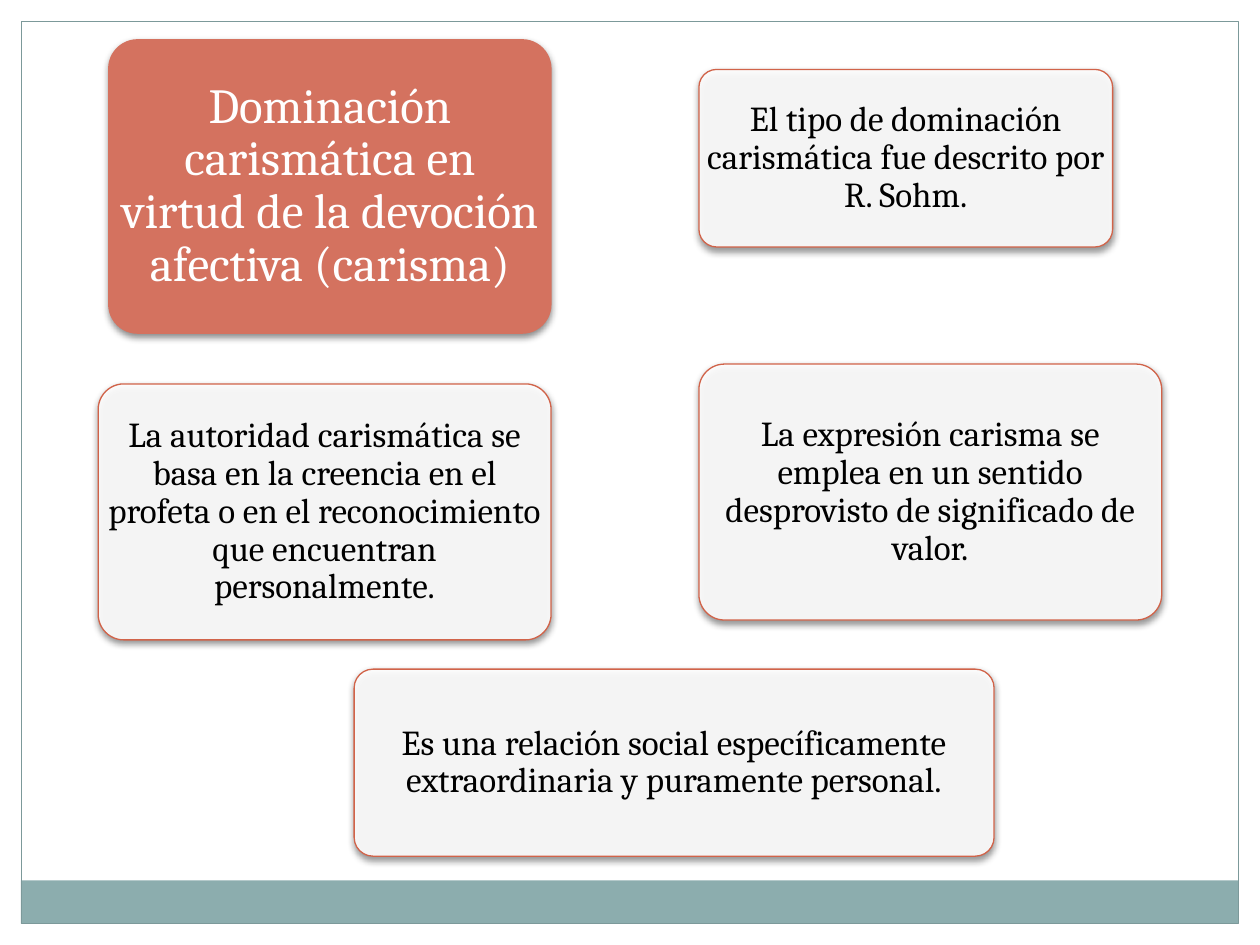
import pptx
import pptx.util
import pptx.dml.color
import pptx.enum.shapes
import pptx.enum.text
import pptx.oxml
import pptx.oxml.ns
from lxml import etree

Cm = pptx.util.Cm
Pt = pptx.util.Pt
SHAPE = pptx.enum.shapes.MSO_SHAPE

THEME = {
    "font": "Cambria",
    "title_size": 28,
    "body_size": 20,
    "white": "FFFFFF",
    "black": "000000",
    "coral": "D4725F",
    "coral_line": "D16349",
    "band": "8CADAE",
    "frame": "7C999A",
}


def add_box(s, kind, at, fill=None, line=None, alpha=None, shadow=False):
    sp = s.shapes.add_shape(kind, *[Cm(v) for v in at])
    sp.shadow.inherit = False
    if kind == SHAPE.ROUNDED_RECTANGLE:
        sp.adjustments[0] = 0.1
    if fill:
        sp.fill.solid()
        sp.fill.fore_color.rgb = pptx.dml.color.RGBColor.from_string(fill)
    else:
        sp.fill.background()
    if line:
        sp.line.color.rgb = pptx.dml.color.RGBColor.from_string(line)
        sp.line.width = Pt(0.75)
    else:
        sp.line.fill.background()
    qn = pptx.oxml.ns.qn
    spPr = sp._element.spPr
    if alpha:
        color = spPr.find(qn("a:solidFill")).find(qn("a:srgbClr"))
        etree.SubElement(color, qn("a:alpha"), val=str(alpha * 1000))
    if shadow:
        spPr.find(qn("a:effectLst")).append(pptx.oxml.parse_xml(
            f'<a:outerShdw {pptx.oxml.ns.nsdecls("a")} blurRad="{Pt(4)}" dist="{Pt(2)}" '
            f'dir="5400000" rotWithShape="0"><a:srgbClr val="{THEME["black"]}">'
            '<a:alpha val="45000"/></a:srgbClr></a:outerShdw>'))
    return sp


def write(sp, text, size, color, inset):
    tf = sp.text_frame
    tf.word_wrap = True
    tf.auto_size = pptx.enum.text.MSO_AUTO_SIZE.NONE
    tf.vertical_anchor = pptx.enum.text.MSO_ANCHOR.MIDDLE
    tf.margin_left = tf.margin_right = Cm(inset)
    tf.margin_top = tf.margin_bottom = Cm(inset / 2)
    p = tf.paragraphs[0]
    p.alignment = pptx.enum.text.PP_ALIGN.CENTER
    p.line_spacing = 0.9
    r = p.add_run()
    r.text = text
    r.font.name = THEME["font"]
    r.font.size = Pt(size)
    r.font.color.rgb = pptx.dml.color.RGBColor.from_string(color)


prs = pptx.Presentation()
prs.slide_width = Cm(25.4)
prs.slide_height = Cm(19.05)
s = prs.slides.add_slide(prs.slide_layouts[5])

add_box(s, SHAPE.RECTANGLE, (0.42, 17.75, 24.54, 0.87), fill=THEME["band"])
add_box(s, SHAPE.RECTANGLE, (0.43, 0.43, 24.54, 18.19), line=THEME["frame"])

add_box(s, SHAPE.ROUNDED_RECTANGLE, (2.18, 0.79, 8.94, 5.94),
        fill=THEME["coral"], shadow=True)
title = s.shapes.title
title.left, title.top, title.width, title.height = Cm(2.32), Cm(0.96), Cm(8.66), Cm(5.6)
write(title, "Dominación carismática en virtud de la devoción afectiva (carisma)",
      THEME["title_size"], THEME["white"], 0.1)
s.shapes._spTree.append(title._element)

cards = [
    ((14.09, 1.4, 8.34, 3.58),
     "El tipo de dominación carismática fue descrito por R. Sohm."),
    ((1.98, 7.74, 9.13, 5.16),
     "La autoridad carismática se basa en la creencia en el profeta o en el "
     "reconocimiento que encuentran personalmente."),
    ((14.09, 7.34, 9.33, 5.16),
     "La expresión carisma se emplea en un sentido desprovisto de significado de valor."),
    ((7.14, 13.49, 12.9, 3.77),
     "Es una relación social específicamente extraordinaria y puramente personal."),
]
for at, text in cards:
    sp = add_box(s, SHAPE.ROUNDED_RECTANGLE, at, fill=THEME["white"],
                 line=THEME["coral_line"], alpha=90, shadow=True)
    write(sp, text, THEME["body_size"], THEME["black"], 0.05)

prs.save("out.pptx")
